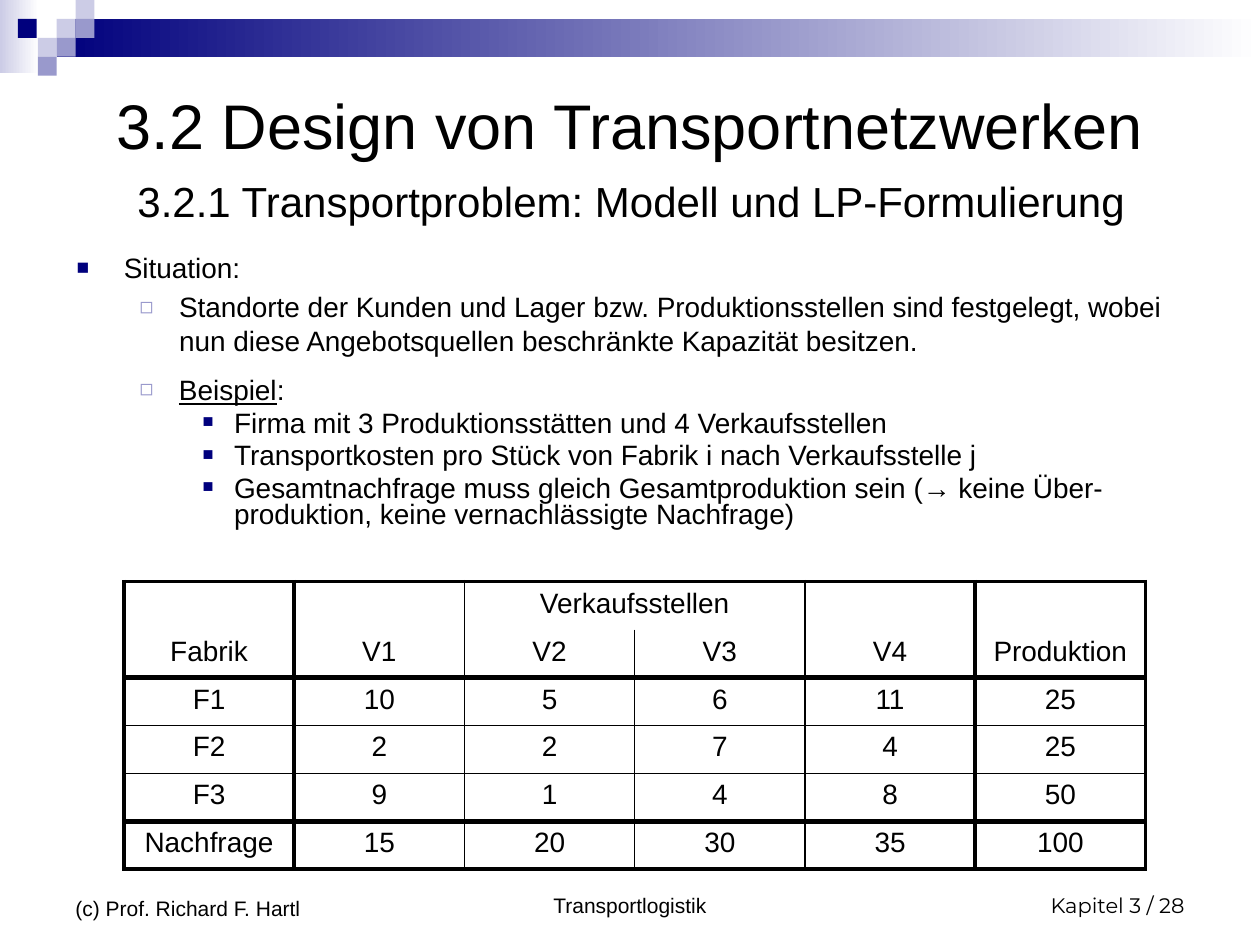
from lxml.etree import SubElement
from pptx import Presentation
from pptx.dml.color import RGBColor
from pptx.enum.shapes import MSO_SHAPE
from pptx.enum.text import MSO_ANCHOR, PP_ALIGN
from pptx.oxml.ns import qn
from pptx.util import Pt

HUES = {"text": "000000", "navy": "00007D", "mid": "9999CC",
        "pale": "CCCCE6", "white": "FFFFFF"}
GAP = 3.2
TILE = 10.8
TILES = [(32.4, 10.8, "pale"), (43.2, 0, "pale"), (43.2, 10.8, "mid"),
         (21.6, 21.6, "pale"), (10.2, 10.8, "navy"), (32.4, 21.6, "mid"),
         (21.6, 32.4, "mid")]
LEVELS = [(27, 27, "■", "navy", 75),
          (58.5, 22.5, "◻", "mid", 80),
          (90, 18, "■", "navy", 65)]
FACTS = [
    (0, ["Situation:"]),
    (1, ["Standorte der Kunden und Lager bzw. Produktionsstellen sind festgelegt, "
         "wobei nun diese Angebotsquellen beschränkte Kapazität besitzen."]),
]
CASE = [
    (1, ["Beispiel", ":"]),
    (2, ["Firma mit 3 Produktionsstätten und 4 Verkaufsstellen"]),
    (2, ["Transportkosten pro Stück von Fabrik i nach Verkaufsstelle j"]),
    (2, ["Gesamtnachfrage muss gleich Gesamtproduktion sein (→ keine "
         "Über-produktion, keine vernachlässigte Nachfrage)"]),
]
ROWS = [
    ["", "", "Verkaufsstellen", "", "", ""],
    ["Fabrik", "V1", "V2", "V3", "V4", "Produktion"],
    ["F1", "10", "5", "6", "11", "25"],
    ["F2", "2", "2", "7", "4", "25"],
    ["F3", "9", "1", "4", "8", "50"],
    ["Nachfrage", "15", "20", "30", "35", "100"],
]
DOWN = [2.25, 3, 1, 1, 1, 3, 2.25]
CROSS = [2.25, 0, 3, 1, 1, 3, 2.25]


def hue(name):
    return RGBColor.from_string(HUES[name])


def style(para, size, face="Arial"):
    para.font.size = Pt(size)
    para.font.name = face
    para.font.color.rgb = hue("text")


def add_block(slide, left, top, width, height, *tones):
    block = slide.shapes.add_shape(MSO_SHAPE.RECTANGLE, Pt(left), Pt(top),
                                   Pt(width), Pt(height))
    block.shadow.inherit = False
    block.line.fill.background()
    if len(tones) == 1:
        block.fill.solid()
        block.fill.fore_color.rgb = hue(tones[0])
        return
    block.fill.gradient()
    block.fill.gradient_angle = 0
    for stop, tone in zip(block.fill.gradient_stops, tones):
        stop.color.rgb = hue(tone)


def add_frame(slide, left, top, width, height, anchor=MSO_ANCHOR.TOP):
    box = slide.shapes.add_textbox(Pt(left), Pt(top), Pt(width), Pt(height))
    frame = box.text_frame
    frame.word_wrap = True
    frame.vertical_anchor = anchor
    return frame


def add_line(slide, text, spot, size, align, anchor, face="Arial"):
    para = add_frame(slide, *spot, anchor).paragraphs[0]
    para.text = text
    para.alignment = align
    style(para, size, face)


def add_mark(para, level):
    left, hang, char, tone, scale = LEVELS[level]
    para.level = level
    props = para._p.get_or_add_pPr()
    props.set("marL", str(Pt(left)))
    props.set("indent", str(-Pt(hang)))
    color = SubElement(props, qn("a:buClr"))
    SubElement(color, qn("a:srgbClr"), val=HUES[tone])
    SubElement(props, qn("a:buSzPct"), val=str(scale * 1000))
    SubElement(props, qn("a:buFont"), typeface="Arial")
    SubElement(props, qn("a:buChar"), char=char)


def add_list(slide, items, spot, pitch=None):
    frame = add_frame(slide, *spot)
    for i, (level, parts) in enumerate(items):
        para = frame.add_paragraph() if i else frame.paragraphs[0]
        add_mark(para, level)
        style(para, 16)
        if i:
            para.space_before = Pt(GAP)
        if pitch:
            para.line_spacing = pitch
        for part in parts:
            para.add_run().text = part
        if len(parts) > 1:
            para.runs[0].font.underline = True


def add_edge(cell, side, width):
    props = cell._tc.get_or_add_tcPr()
    line = SubElement(props, qn("a:ln" + side), w=str(Pt(width)))
    if width:
        fill = SubElement(line, qn("a:solidFill"))
        SubElement(fill, qn("a:srgbClr"), val=HUES["text"])
    else:
        SubElement(line, qn("a:noFill"))


def add_grid(slide, left, top, width, height):
    count = len(ROWS[0])
    grid = slide.shapes.add_table(len(ROWS), count, Pt(left), Pt(top),
                                  Pt(width), Pt(height)).table
    grid.first_row = grid.horz_banding = False
    for col in grid.columns:
        col.width = Pt(width / count)
    for r, row in enumerate(ROWS):
        grid.rows[r].height = Pt(height / len(ROWS))
        for c, text in enumerate(row):
            cell = grid.cell(r, c)
            para = cell.text_frame.paragraphs[0]
            para.text = text
            para.alignment = PP_ALIGN.CENTER
            style(para, 16)
            for side, size in (("L", DOWN[c]), ("R", DOWN[c + 1]),
                               ("T", CROSS[r]), ("B", CROSS[r + 1])):
                add_edge(cell, side, size)
            cell.fill.background()
    grid.cell(0, 2).merge(grid.cell(0, 3))


def main():
    deck = Presentation()
    deck.slide_width, deck.slide_height = Pt(720), Pt(540)
    slide = deck.slides.add_slide(deck.slide_layouts[6])

    add_block(slide, 0, 0, 22.3, 41.8, "pale", "white")
    add_block(slide, 32.4, 10.8, 687.6, 21.6, "navy", "white")
    for left, top, tone in TILES:
        add_block(slide, left, top, TILE, TILE, tone)

    low, mid = MSO_ANCHOR.BOTTOM, MSO_ANCHOR.MIDDLE
    add_line(slide, "Transportlogistik", (246, 492, 228, 36), 12,
             PP_ALIGN.CENTER, low)
    add_line(slide, "Kapitel 3 / 28", (516, 492, 168, 36), 12,
             PP_ALIGN.RIGHT, low, "Montserrat")
    add_line(slide, "(c) Prof. Richard F. Hartl", (36, 492, 168, 37.4), 12,
             PP_ALIGN.LEFT, low)
    add_line(slide, "3.2 Design von Transportnetzwerken", (36, 36, 648, 70), 36,
             PP_ALIGN.CENTER, mid)
    add_list(slide, FACTS, (36.7, 139.7, 647.3, 67.7))
    add_list(slide, CASE, (36.7, 213.1, 648, 96.5), 0.8)
    add_grid(slide, 70.8, 332.4, 583.8, 164.4)
    add_line(slide, "3.2.1 Transportproblem: Modell und LP-Formulierung",
             (36.7, 94.3, 648, 41), 24, PP_ALIGN.CENTER, mid)
    deck.save("out.pptx")


if __name__ == "__main__":
    main()
